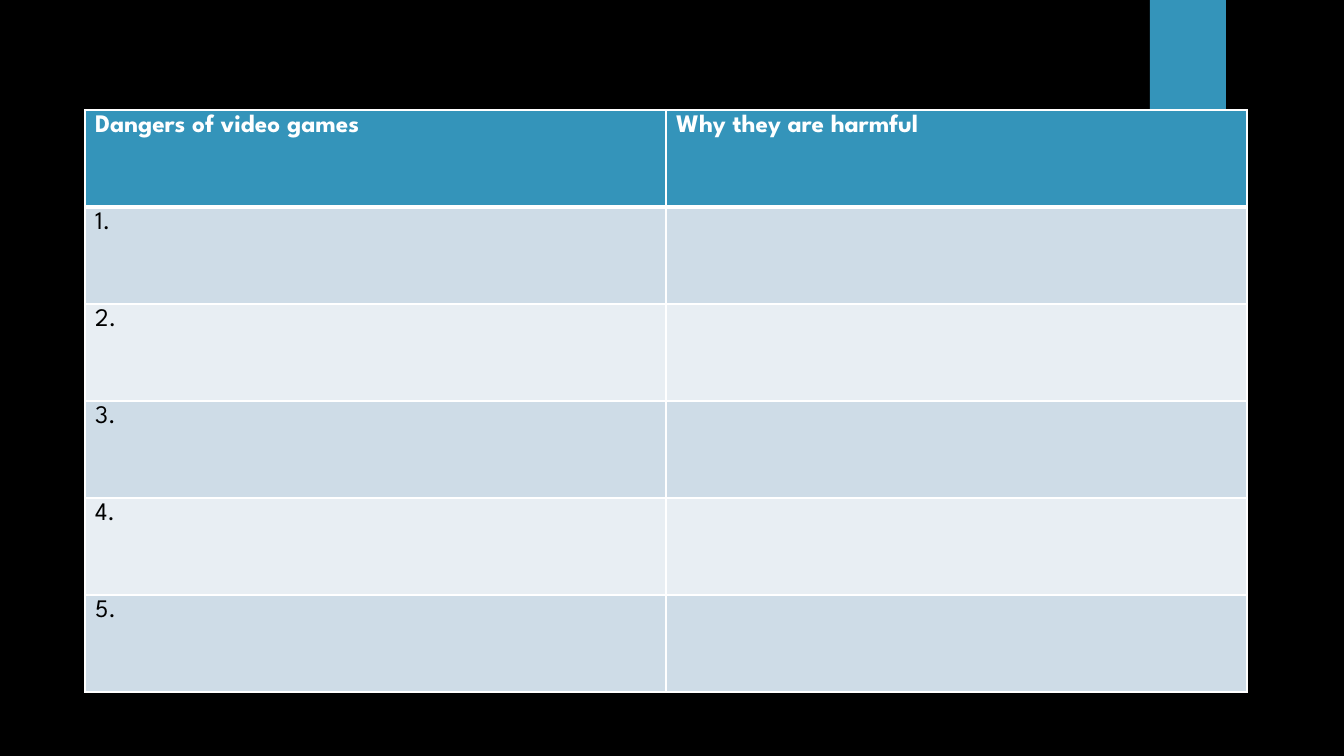
from dataclasses import dataclass

from lxml import etree
from pptx import Presentation
from pptx.dml.color import RGBColor
from pptx.enum.shapes import MSO_SHAPE
from pptx.oxml.ns import qn
from pptx.util import Emu, Pt

RECTANGLE = MSO_SHAPE.RECTANGLE
EMU_PER_PX = 12192000 / 1344
BLANK_LAYOUT = 6


@dataclass(frozen=True)
class Theme:
    font: str = "League Spartan"
    text_size: int = 18
    background: str = "000000"
    accent: str = "3494BA"
    header_text: str = "FFFFFF"
    body_text: str = "000000"
    bands: tuple = ("CEDCE7", "E8EEF3")
    border: str = "FFFFFF"
    thin: int = 1
    thick: int = 3


def px(length):
    return Emu(round(length * EMU_PER_PX))


def paint(fill, color):
    fill.solid()
    fill.fore_color.rgb = RGBColor.from_string(color)


def write(frame, text, *, font, size, color, bold=False):
    span = frame.paragraphs[0].add_run()
    span.text = text
    span.font.name = font
    span.font.size = Pt(size)
    span.font.bold = bold
    span.font.color.rgb = RGBColor.from_string(color)


class SlideBuilder:
    def __init__(self, page, theme):
        self.page = page
        self.theme = theme
        paint(page.background.fill, theme.background)

    def bar(self, left, top, width, height):
        box = self.page.shapes.add_shape(
            RECTANGLE, px(left), px(top), px(width), px(height))
        box.shadow.inherit = False
        paint(box.fill, self.theme.accent)
        box.line.fill.background()

    def borders(self, cell, **widths):
        # Border elements come before the fill, in the order L, R, T, B
        properties = cell._tc.get_or_add_tcPr()
        for index, (side, width) in enumerate(widths.items()):
            line = etree.Element(qn(f"a:ln{side}"), w=str(Pt(width)))
            fill = etree.SubElement(line, qn("a:solidFill"))
            etree.SubElement(fill, qn("a:srgbClr"), val=self.theme.border)
            properties.insert(index, line)

    def table(self, rows, left, top, column_width, row_height):
        theme = self.theme
        column_count = len(rows[0])
        table = self.page.shapes.add_table(
            len(rows), column_count, px(left), px(top),
            px(column_width * column_count), px(row_height * len(rows))).table
        for row_index, texts in enumerate(rows):
            header = row_index == 0
            fill = theme.accent if header else theme.bands[(row_index - 1) % 2]
            above = theme.thick if row_index == 1 else theme.thin
            below = theme.thick if header else theme.thin
            for column_index, text in enumerate(texts):
                cell = table.cell(row_index, column_index)
                paint(cell.fill, fill)
                self.borders(cell, L=theme.thin, R=theme.thin, T=above, B=below)
                if text:
                    write(cell.text_frame, text, font=theme.font,
                          size=theme.text_size, bold=header,
                          color=theme.header_text if header else theme.body_text)


def main():
    deck = Presentation()
    deck.slide_width, deck.slide_height = px(1344), px(756)
    page = deck.slides.add_slide(deck.slide_layouts[BLANK_LAYOUT])
    builder = SlideBuilder(page, Theme())

    # Accent tab at the top right
    builder.bar(1150, 0, 76, 126)

    # Worksheet table with numbered rows to fill in
    rows = [("Dangers of video games", "Why they are harmful")]
    rows += [(f"{number}.", "") for number in range(1, 6)]
    builder.table(rows, left=85, top=110, column_width=581, row_height=97)

    deck.save("out.pptx")


if __name__ == "__main__":
    main()
